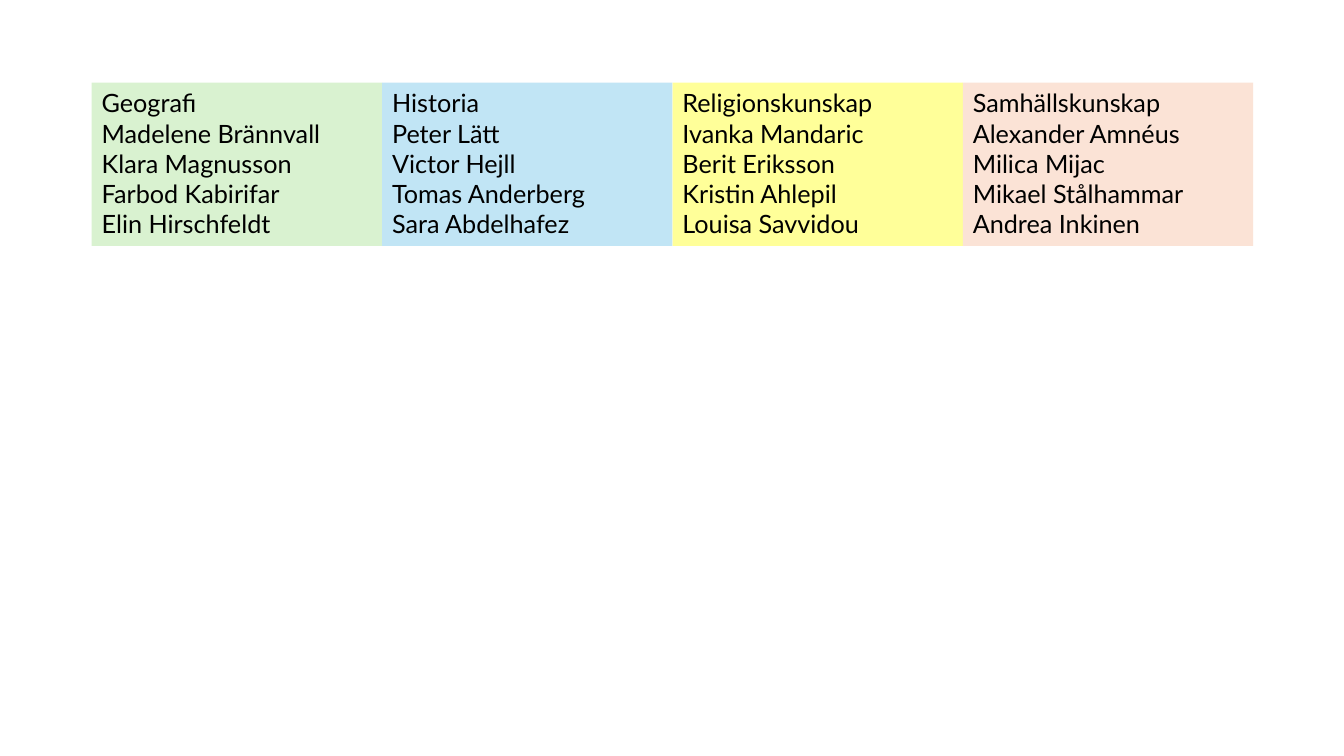
from dataclasses import dataclass

from pptx import Presentation
from pptx.dml.color import RGBColor
from pptx.enum.text import MSO_ANCHOR, MSO_AUTO_SIZE, PP_ALIGN
from pptx.util import Inches, Pt

LEFT = PP_ALIGN.LEFT
TOP = MSO_ANCHOR.TOP
GROW = MSO_AUTO_SIZE.SHAPE_TO_FIT_TEXT
BLANK_LAYOUT = 6


@dataclass(frozen=True)
class Theme:
    font: str = "Lato"
    body_size: int = 18
    ink: str = "000000"
    green: str = "D9F2D0"
    blue: str = "C1E5F5"
    yellow: str = "FFFF99"
    peach: str = "FBE3D6"


THEME = Theme()

# Subject, its teachers and its colour
SUBJECTS = [
    ("Geografi", ["Madelene Brännvall", "Klara Magnusson",
                  "Farbod Kabirifar", "Elin Hirschfeldt"], THEME.green),
    ("Historia", ["Peter Lätt", "Victor Hejll",
                  "Tomas Anderberg", "Sara Abdelhafez"], THEME.blue),
    ("Religionskunskap", ["Ivanka Mandaric", "Berit Eriksson",
                          "Kristin Ahlepil", "Louisa Savvidou"], THEME.yellow),
    ("Samhällskunskap", ["Alexander Amnéus", "Milica Mijac",
                         "Mikael Stålhammar", "Andrea Inkinen"], THEME.peach),
]

# Column grid, in inches
GRID_LEFT, GRID_TOP = 0.91, 0.82
COLUMN_WIDTH, COLUMN_HEIGHT = 2.88, 1.62


def write_line(para, text, *, font, size, color, align=LEFT):
    para.alignment = align
    span = para.add_run()
    span.text = text
    span.font.name = font
    span.font.size = Pt(size)
    span.font.color.rgb = RGBColor.from_string(color)


class SlideBuilder:
    def __init__(self, page, theme):
        self.page = page
        self.theme = theme

    def text_panel(self, lines, left, top, width, height, fill):
        box = self.page.shapes.add_textbox(
            Inches(left), Inches(top), Inches(width), Inches(height))
        box.fill.solid()
        box.fill.fore_color.rgb = RGBColor.from_string(fill)
        frame = box.text_frame
        frame.word_wrap = True
        frame.auto_size = GROW
        frame.vertical_anchor = TOP
        for index, line in enumerate(lines):
            para = frame.add_paragraph() if index else frame.paragraphs[0]
            write_line(para, line, font=self.theme.font,
                       size=self.theme.body_size, color=self.theme.ink)


def main():
    deck = Presentation()
    deck.slide_width, deck.slide_height = Inches(13.33), Inches(7.5)
    page = deck.slides.add_slide(deck.slide_layouts[BLANK_LAYOUT])
    builder = SlideBuilder(page, THEME)

    # One panel per subject, side by side
    for column, (subject, teachers, fill) in enumerate(SUBJECTS):
        builder.text_panel([subject, *teachers],
                           GRID_LEFT + column * COLUMN_WIDTH, GRID_TOP,
                           COLUMN_WIDTH, COLUMN_HEIGHT, fill)

    deck.save("out.pptx")


if __name__ == "__main__":
    main()
